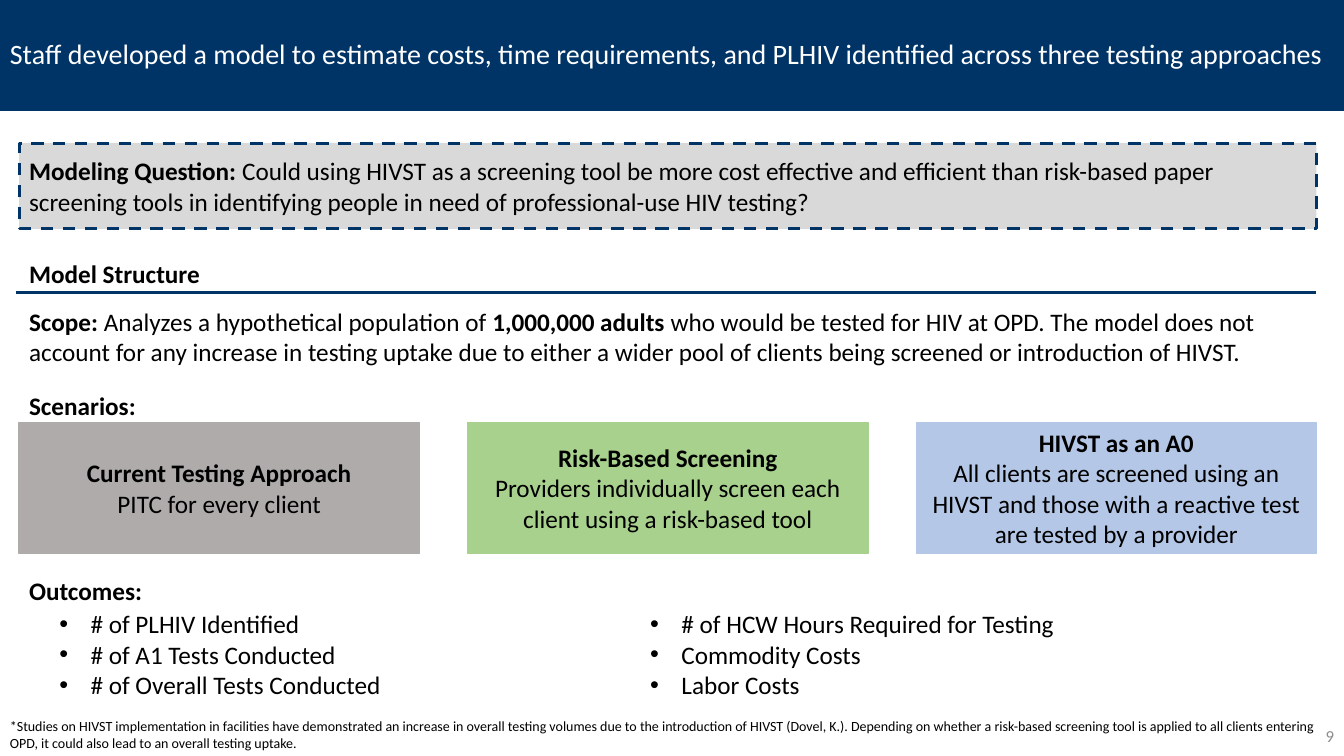
from dataclasses import dataclass

import lxml.etree
import pptx
import pptx.dml.color
import pptx.enum.dml
import pptx.enum.shapes
import pptx.enum.text
import pptx.oxml.ns
import pptx.shapes.autoshape
import pptx.util

FONT = "Calibri"
COLORS = {
    "navy": "003366", "white": "FFFFFF", "black": "000000", "muted": "8C8C8C",
    "question": "D9D9D9", "current": "AFABAB", "risk": "A9D18E", "hivst": "B4C7E7",
}

# The grid has square cells, ten to the inch.
CELL = pptx.util.Inches(0.1)
COLUMNS, ROWS = 133.33, 75
MARGIN, CONTENT = 1.9, 128.7
SCENARIO_WIDTH, SCENARIO_TOP, SCENARIO_HEIGHT = 39.7, 41.9, 13
BULLET_INDENT = 3.1

ALIGN = pptx.enum.text.PP_ALIGN
ANCHOR = pptx.enum.text.MSO_ANCHOR


@dataclass(frozen=True)
class Area:
    column: float
    row: float
    columns: float
    rows: float

    def emu(self) -> tuple[int, ...]:
        return tuple(cells(n) for n in (self.column, self.row, self.columns, self.rows))


@dataclass(frozen=True)
class Run:
    text: str
    bold: bool = False


@dataclass(frozen=True)
class Para:
    runs: tuple[Run, ...]
    before: float = 0
    line_spacing: float = 1.0
    bullet: bool = False


@dataclass(frozen=True)
class Style:
    size: float = 18
    color: str = "black"
    align: ALIGN = ALIGN.LEFT
    anchor: ANCHOR = ANCHOR.TOP


@dataclass(frozen=True)
class Scenario:
    name: str
    detail: str
    color: str


QUESTION = Para((
    Run("Modeling Question: ", True),
    Run("Could using HIVST as a screening tool be more cost effective and efficient than "
        "risk-based paper screening tools in identifying people in need of "
        "professional-use HIV testing?"),
))
MODEL = (
    Para((
        Run("Scope: ", True),
        Run("Analyzes a hypothetical population of "),
        Run("1,000,000 adults ", True),
        Run("who would be tested for HIV at OPD. The model does not account for any increase "
            "in testing uptake due to either a wider pool of clients being screened or "
            "introduction of HIVST."),
    )),
    Para((Run("Scenarios:", True),), before=17),
    Para((Run("Outcomes:", True),), before=110),
)
SCENARIOS = (
    Scenario("Current Testing Approach", "PITC for every client", "current"),
    Scenario("Risk-Based Screening",
             "Providers individually screen each client using a risk-based tool", "risk"),
    Scenario("HIVST as an A0",
             "All clients are screened using an HIVST and those with a reactive test "
             "are tested by a provider", "hivst"),
)
OUTCOMES = (
    "# of PLHIV Identified", "# of A1 Tests Conducted", "# of Overall Tests Conducted",
    "# of HCW Hours Required for Testing", "Commodity Costs", "Labor Costs",
)
FOOTNOTE = (
    "*Studies on HIVST implementation in facilities have demonstrated an increase in overall "
    "testing volumes due to the introduction of HIVST (Dovel, K.). Depending on whether a "
    "risk-based screening tool is applied to all clients entering OPD, it could also lead to "
    "an overall testing uptake."
)


def cells(count: float) -> int:
    return round(count * CELL)


def rgb(name: str) -> pptx.dml.color.RGBColor:
    return pptx.dml.color.RGBColor.from_string(COLORS[name])


def write(shape: pptx.shapes.autoshape.Shape, paras: tuple[Para, ...], style: Style) -> None:
    frame = shape.text_frame
    frame.word_wrap = True
    frame.vertical_anchor = style.anchor
    for index, para in enumerate(paras):
        paragraph = frame.add_paragraph() if index else frame.paragraphs[0]
        paragraph.alignment = style.align
        paragraph.space_before = pptx.util.Pt(para.before)
        paragraph.line_spacing = para.line_spacing
        if para.bullet:
            properties = paragraph._p.get_or_add_pPr()
            properties.set("marL", str(cells(BULLET_INDENT)))
            properties.set("indent", str(-cells(BULLET_INDENT)))
            for tag, key, value in (("a:buFont", "typeface", "Arial"), ("a:buChar", "char", "•")):
                lxml.etree.SubElement(properties, pptx.oxml.ns.qn(tag)).set(key, value)
        for part in para.runs:
            run = paragraph.add_run()
            run.text = part.text
            run.font.name = FONT
            run.font.size = pptx.util.Pt(style.size)
            run.font.bold = part.bold
            run.font.color.rgb = rgb(style.color)


def add_text(slide: pptx.slide.Slide, area: Area, paras: tuple[Para, ...],
             style: Style = Style()) -> pptx.shapes.autoshape.Shape:
    box = slide.shapes.add_textbox(*area.emu())
    write(box, paras, style)
    return box


def add_panel(slide: pptx.slide.Slide, area: Area, fill: str, line: str, line_width: float,
              paras: tuple[Para, ...], style: Style) -> pptx.shapes.autoshape.Shape:
    panel = slide.shapes.add_shape(pptx.enum.shapes.MSO_SHAPE.RECTANGLE, *area.emu())
    panel.shadow.inherit = False
    panel.fill.solid()
    panel.fill.fore_color.rgb = rgb(fill)
    panel.line.color.rgb = rgb(line)
    panel.line.width = pptx.util.Pt(line_width)
    write(panel, paras, style)
    return panel


def add_heading_rule(slide: pptx.slide.Slide, column: float, row: float, columns: float) -> None:
    rule = slide.shapes.add_connector(
        pptx.enum.shapes.MSO_CONNECTOR.STRAIGHT,
        cells(column), cells(row), cells(column + columns), cells(row))
    rule.line.color.rgb = rgb("navy")
    rule.line.width = pptx.util.Pt(2.25)
    lxml.etree.SubElement(rule._element.spPr, pptx.oxml.ns.qn("a:effectLst"))


def add_scenarios(slide: pptx.slide.Slide) -> None:
    pitch = (CONTENT - SCENARIO_WIDTH) / (len(SCENARIOS) - 1)
    for index, scenario in enumerate(SCENARIOS):
        area = Area(MARGIN + index * pitch, SCENARIO_TOP, SCENARIO_WIDTH, SCENARIO_HEIGHT)
        paras = (Para((Run(scenario.name, True),)), Para((Run(scenario.detail),)))
        add_panel(slide, area, scenario.color, scenario.color, 1, paras,
                  Style(align=ALIGN.CENTER, anchor=ANCHOR.MIDDLE))


def main() -> None:
    deck = pptx.Presentation()
    deck.slide_width, deck.slide_height = cells(COLUMNS), cells(ROWS)
    slide = deck.slides.add_slide(deck.slide_layouts[6])

    title = Run("Staff developed a model to estimate costs, time requirements, and PLHIV "
                "identified across three testing approaches")
    header = add_panel(slide, Area(0, 0, COLUMNS, 11), "navy", "navy", 1,
                       (Para((title,), line_spacing=0.9),),
                       Style(20, "white", anchor=ANCHOR.MIDDLE))
    header.line.fill.background()
    add_text(slide, Area(COLUMNS - 30, 71, 30, 4), (Para((Run("9"),)),),
             Style(12, "muted", ALIGN.RIGHT, ANCHOR.MIDDLE))

    question = add_panel(slide, Area(MARGIN, 14.2, CONTENT, 8.5), "question", "navy", 2.25,
                         (QUESTION,), Style(anchor=ANCHOR.MIDDLE))
    question.line.dash_style = pptx.enum.dml.MSO_LINE.DASH

    add_text(slide, Area(MARGIN, 25.1, 84.1, 4), (Para((Run("Model Structure", True),)),))
    add_heading_rule(slide, 1.6, 29, 129)
    add_text(slide, Area(MARGIN, 29.9, CONTENT, 40.4), MODEL)
    add_scenarios(slide)

    outcomes = add_text(slide, Area(4.9, 59.9, 119.2, 10),
                        tuple(Para((Run(outcome),), bullet=True) for outcome in OUTCOMES))
    outcomes.text_frame.auto_size = pptx.enum.text.MSO_AUTO_SIZE.SHAPE_TO_FIT_TEXT
    outcomes.text_frame._txBody.bodyPr.set("numCol", "2")

    add_text(slide, Area(0, 70.7, 131.5, 4.4), (Para((Run(FOOTNOTE),)),), Style(10))
    deck.save("out.pptx")


if __name__ == "__main__":
    main()
